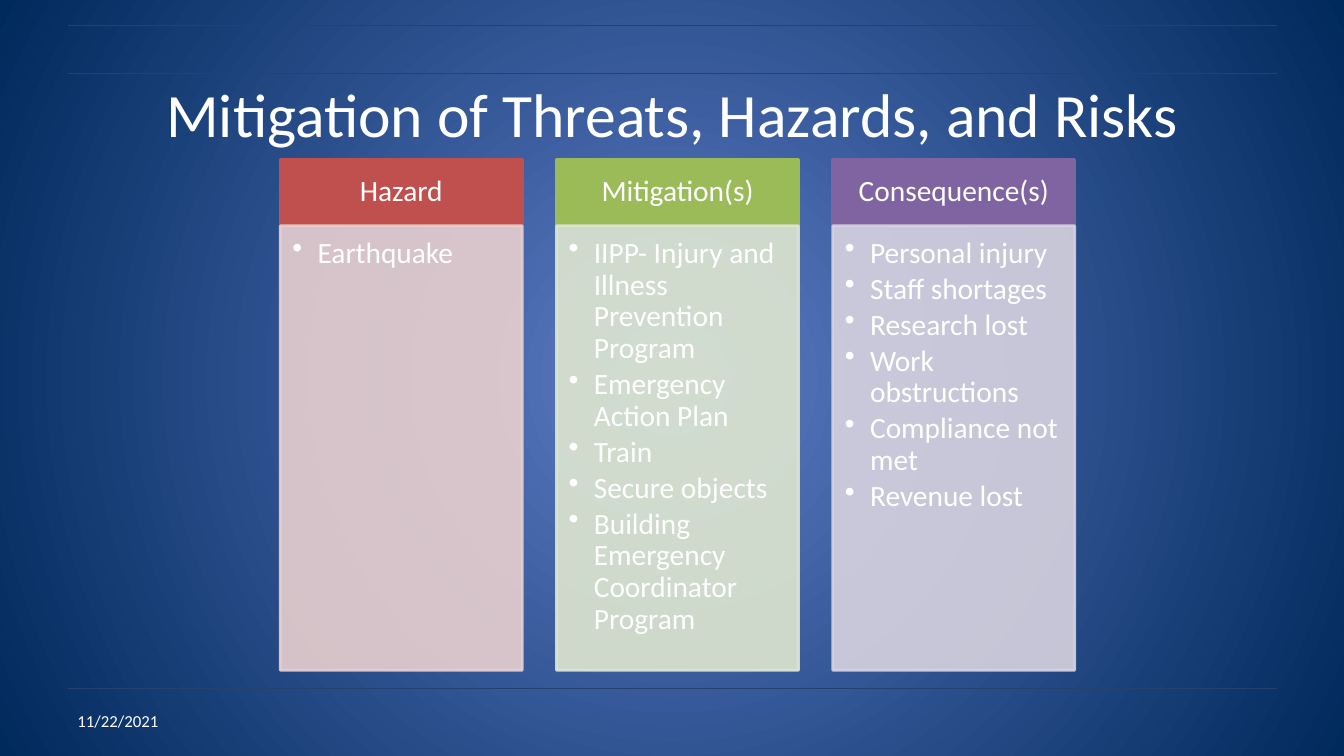
from dataclasses import dataclass

from lxml import etree
from pptx import Presentation
from pptx.dml.color import RGBColor as RGB
from pptx.enum.shapes import MSO_CONNECTOR as Link, MSO_SHAPE as Form
from pptx.enum.text import MSO_ANCHOR as Anchor, MSO_AUTO_SIZE as Fit, PP_ALIGN as Align
from pptx.oxml.ns import qn
from pptx.util import Inches, Pt


@dataclass(frozen=True)
class Theme:
    font: str = "Calibri"
    text: str = "FFFFFF"
    rule: str = "25416E"
    glow: str = "5E7CC5"
    edge: str = "00295C"
    title: int = 44
    body: int = 21
    date: int = 12


theme = Theme()


def write(para, text, size, align=Align.LEFT):
    para.alignment = align
    run = para.add_run()
    run.text = text
    run.font.name = theme.font
    run.font.size = Pt(size)
    run.font.color.rgb = RGB.from_string(theme.text)


def block(left, top, width, height, color, pads):
    """Add a filled rectangle and return it; pads are left, top, right, bottom."""
    box = slide.shapes.add_shape(
        Form.RECTANGLE, Inches(left), Inches(top), Inches(width), Inches(height))
    box.shadow.inherit = False
    box.fill.solid()
    box.fill.fore_color.rgb = RGB.from_string(color)
    box.line.color.rgb = RGB.from_string(color)
    box.line.width = Pt(2)
    frame = box.text_frame
    frame.word_wrap = True
    frame.margin_left, frame.margin_top, frame.margin_right, frame.margin_bottom = map(
        Inches, pads)
    return box


deck = Presentation()
deck.slide_width, deck.slide_height = Inches(13.33), Inches(7.5)
slide = deck.slides.add_slide(deck.slide_layouts[5])

# Background: light centre, dark corners
back = slide.background.fill
back.gradient()
for stop, color, place in zip(back.gradient_stops, (theme.glow, theme.edge), (0, 1)):
    stop.color.rgb = RGB.from_string(color)
    stop.position = place
grad = slide.element.find(".//" + qn("a:gradFill"))
grad.remove(grad.find(qn("a:lin")))
ring = etree.SubElement(grad, qn("a:path"), path="circle")
etree.SubElement(ring, qn("a:fillToRect"), l="50000", t="50000", r="50000", b="50000")

# Rules
for y in (6.83, 0.25, 0.73):
    rule = slide.shapes.add_connector(
        Link.STRAIGHT, Inches(0.67), Inches(y), Inches(12.67), Inches(y))
    rule.line.color.rgb = RGB.from_string(theme.rule)
    rule.line.width = Pt(0.75)
    etree.SubElement(rule.element.spPr, qn("a:effectLst"))

# Title
title = slide.shapes.title
title.left, title.top, title.width, title.height = map(Inches, (0.67, 0.49, 12, 1.25))
title.text_frame.auto_size = Fit.NONE
title.text_frame.vertical_anchor = Anchor.MIDDLE
write(title.text_frame.paragraphs[0], "Mitigation of Threats, Hazards, and Risks",
      theme.title, Align.CENTER)

# Columns
columns = (
    ("Hazard", "C0504D", "E8D0D0", ("Earthquake",)),
    ("Mitigation(s)", "9BBB59", "DEE7D1", (
        "IIPP- Injury and Illness Prevention Program",
        "Emergency Action Plan",
        "Train",
        "Secure objects",
        "Building Emergency Coordinator Program",
    )),
    ("Consequence(s)", "8064A2", "D8D3E0", (
        "Personal injury",
        "Staff shortages",
        "Research lost",
        "Work obstructions",
        "Compliance not met",
        "Revenue lost",
    )),
)
for col, (name, dark, pale, items) in enumerate(columns):
    left = 2.78 + 2.74 * col
    head = block(left, 1.58, 2.4, 0.66, dark, (0.16, 0.09, 0.16, 0.09))
    head.text_frame.vertical_anchor = Anchor.MIDDLE
    para = head.text_frame.paragraphs[0]
    para.line_spacing = 0.9
    write(para, name, theme.body, Align.CENTER)

    panel = block(left, 2.24, 2.4, 4.41, pale, (0.12, 0.12, 0.16, 0.18))
    for tint in panel.element.spPr.iter(qn("a:srgbClr")):
        etree.SubElement(tint, qn("a:alpha"), val="90000")
    frame = panel.text_frame
    frame.vertical_anchor = Anchor.TOP
    for row, item in enumerate(items):
        para = frame.add_paragraph() if row else frame.paragraphs[0]
        para.level = 1
        para.line_spacing = 0.9
        para.space_after = Pt(3)
        props = para._p.get_or_add_pPr()
        props.set("marL", str(Inches(0.25)))
        props.set("indent", str(Inches(-0.25)))
        etree.SubElement(props, qn("a:buChar"), char="•")
        write(para, item, theme.body)

# Date
date = slide.shapes.add_textbox(Inches(0.67), Inches(6.95), Inches(3.27), Inches(0.4))
date.text_frame.word_wrap = True
date.text_frame.vertical_anchor = Anchor.MIDDLE
write(date.text_frame.paragraphs[0], "11/22/2021", theme.date)

deck.save("out.pptx")
